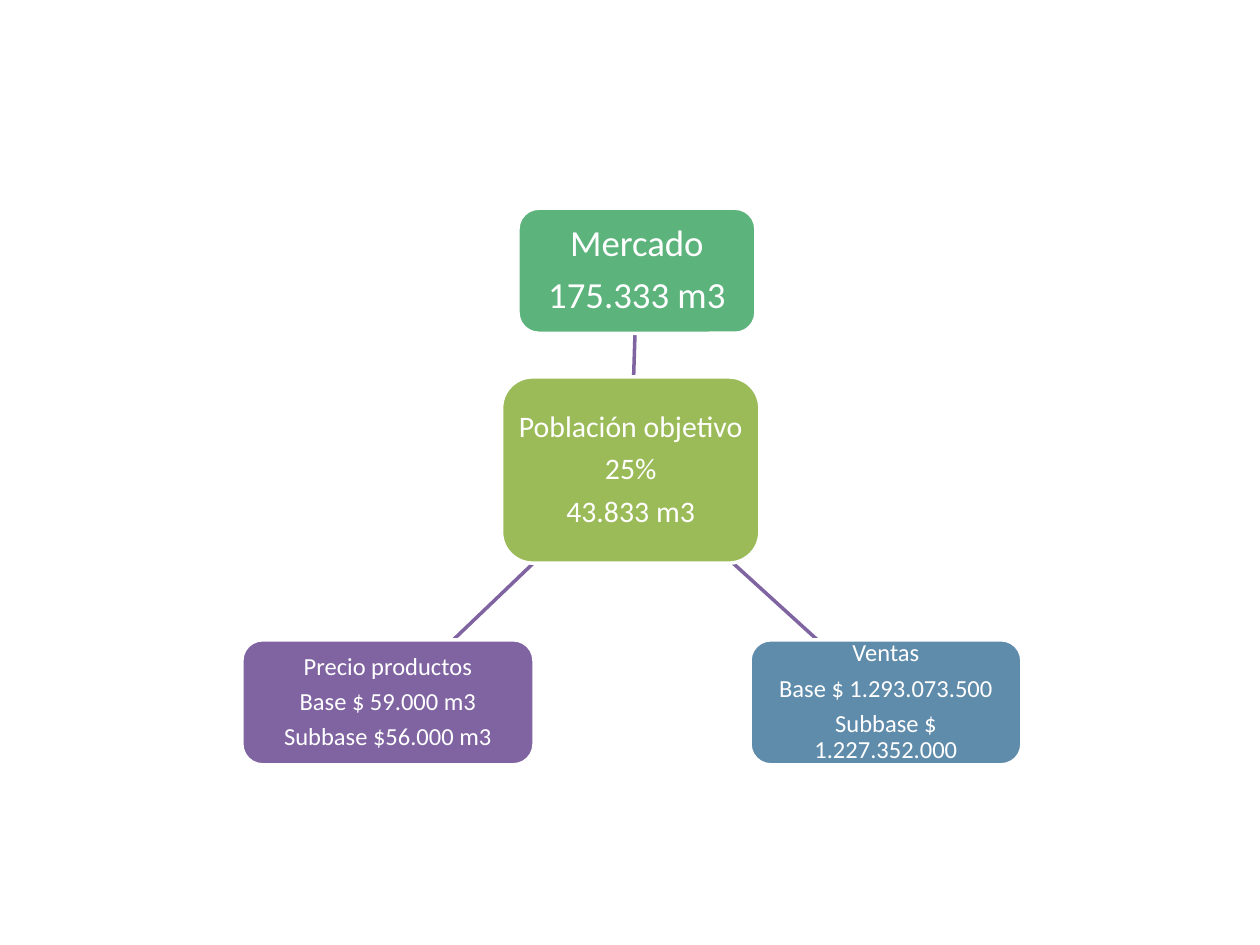
from lxml import etree
from pptx import Presentation
from pptx.dml.color import RGBColor
from pptx.enum import shapes, text
from pptx.oxml.ns import qn
from pptx.util import Pt

FONT = "Calibri"
WHITE = "FFFFFF"
LINK_COLOR = "8064A2"

# left, top, width, height in points
TARGET_BOX = (286.6, 215.4, 147.6, 106.4)
MARKET_BOX = (296, 119, 136, 71.5)
SALES_BOX = (428.6, 365.6, 155.4, 71.5)
PRICE_BOX = (138.2, 365.6, 167, 71.5)


def color(hex_value):
    return RGBColor.from_string(hex_value)


def add_node(slide, box, fill, size, lines):
    """Rounded box with centred lines; spacing follows the text size."""
    shape = slide.shapes.add_shape(
        shapes.MSO_SHAPE.ROUNDED_RECTANGLE, *(Pt(value) for value in box))
    shape.shadow.inherit = False
    shape.fill.solid()
    shape.fill.fore_color.rgb = color(fill)
    shape.line.color.rgb = color(WHITE)
    shape.line.width = Pt(2)

    frame = shape.text_frame
    frame.word_wrap = True
    frame.vertical_anchor = text.MSO_ANCHOR.MIDDLE
    inset = Pt(size * 0.21)
    frame.margin_left = frame.margin_right = inset
    frame.margin_top = frame.margin_bottom = inset
    frame.text = "\n".join(lines)
    for paragraph in frame.paragraphs:
        paragraph.alignment = text.PP_ALIGN.CENTER
        paragraph.line_spacing = 0.9
        paragraph.space_after = Pt(size * 0.35)
        for run in paragraph.runs:
            run.font.name = FONT
            run.font.size = Pt(size)
            run.font.color.rgb = color(WHITE)


def add_link(slide, upper, lower):
    """Line between two box centres, cut to the gap between the boxes."""
    upper_x, upper_y = upper[0] + upper[2] / 2, upper[1] + upper[3] / 2
    lower_x, lower_y = lower[0] + lower[2] / 2, lower[1] + lower[3] / 2
    slope = (lower_x - upper_x) / (lower_y - upper_y)
    points = []
    for y in (upper[1] + upper[3], lower[1]):
        points += [Pt(upper_x + slope * (y - upper_y)), Pt(y)]
    connector = slide.shapes.add_connector(
        shapes.MSO_CONNECTOR.STRAIGHT, *points)
    connector.line.color.rgb = color(LINK_COLOR)
    connector.line.width = Pt(2)
    properties = connector._element.spPr
    etree.SubElement(properties, qn("a:effectLst"))


def main():
    presentation = Presentation()
    presentation.slide_width, presentation.slide_height = Pt(720), Pt(540)
    slide = presentation.slides.add_slide(presentation.slide_layouts[6])

    # Links go behind the boxes
    add_link(slide, MARKET_BOX, TARGET_BOX)
    for box in (SALES_BOX, PRICE_BOX):
        add_link(slide, TARGET_BOX, box)

    # Boxes
    add_node(slide, TARGET_BOX, "9BBB59", 17,
             ["Población objetivo", "25%", "43.833 m3"])
    add_node(slide, MARKET_BOX, "5CB37C", 21, ["Mercado", "175.333 m3"])
    add_node(slide, SALES_BOX, "608CAB", 14,
             ["Ventas", "Base $ 1.293.073.500", "Subbase $ 1.227.352.000"])
    add_node(slide, PRICE_BOX, "8064A2", 14,
             ["Precio productos", "Base $ 59.000 m3", "Subbase $56.000 m3"])

    presentation.save("out.pptx")


if __name__ == "__main__":
    main()
